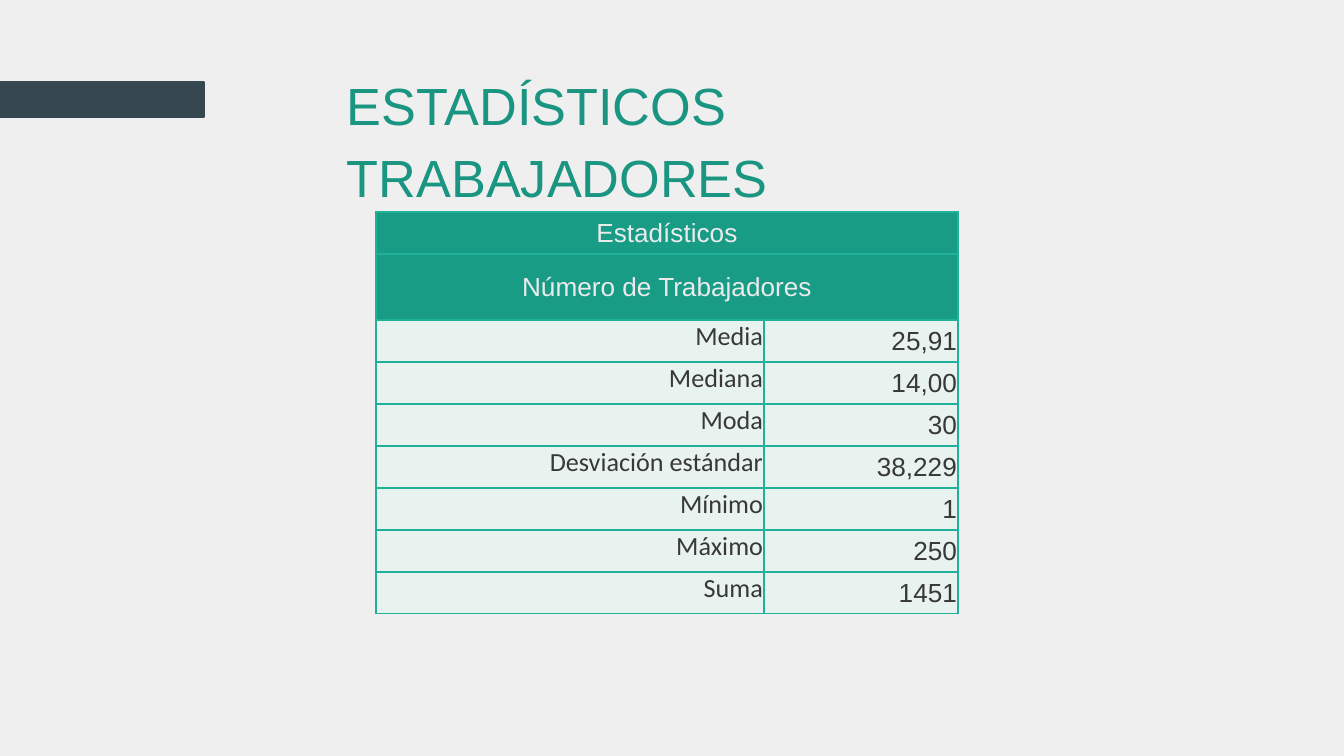
import dataclasses
import lxml.etree
import pptx
import pptx.dml.color
import pptx.enum.shapes
import pptx.enum.text
import pptx.oxml.ns
import pptx.util

RGBColor = pptx.dml.color.RGBColor
PAPER = RGBColor(0xEF, 0xEF, 0xEF)
SLATE = RGBColor(0x37, 0x47, 0x4F)
TEAL = RGBColor(0x1A, 0x95, 0x81)
HEAD = RGBColor(0x18, 0x9C, 0x86)
PALE = RGBColor(0xE8, 0xF2, 0xEF)
LIGHT = RGBColor(0xEB, 0xEB, 0xEB)
DARK = RGBColor(0x38, 0x38, 0x38)
EDGE = RGBColor(0x1F, 0xB2, 0x99)
ALIGN = pptx.enum.text.PP_ALIGN
ANCHOR = pptx.enum.text.MSO_ANCHOR
SCALE = 914400 / 134.4


def px(count: int) -> int:
    return round(count * SCALE)


@dataclasses.dataclass(frozen=True)
class Style:
    font: str
    size: int
    color: RGBColor
    align: ALIGN
    anchor: ANCHOR
    fill: RGBColor | None = None


@dataclasses.dataclass(frozen=True)
class Stat:
    label: str
    value: str


TITLE = Style("Arial", 28, TEAL, ALIGN.LEFT, ANCHOR.TOP)
HEADER = Style("Arial", 14, LIGHT, ALIGN.CENTER, ANCHOR.MIDDLE, HEAD)
LABEL = Style("Calibri", 14, DARK, ALIGN.RIGHT, ANCHOR.TOP, PALE)
VALUE = Style("Arial", 14, DARK, ALIGN.RIGHT, ANCHOR.MIDDLE, PALE)

HEADS = ["Estadísticos", "Número de Trabajadores"]
STATS = [
    Stat("Media", "25,91"),
    Stat("Mediana", "14,00"),
    Stat("Moda", "30"),
    Stat("Desviación estándar", "38,229"),
    Stat("Mínimo", "1"),
    Stat("Máximo", "250"),
    Stat("Suma", "1451"),
]
WIDTHS = [388, 194]
HEIGHTS = [42, 66] + [42] * len(STATS)


def write(frame, text: str, style: Style):
    line = frame.paragraphs[0]
    line.alignment = style.align
    run = line.add_run()
    run.text = text
    run.font.name = style.font
    run.font.size = pptx.util.Pt(style.size)
    run.font.color.rgb = style.color
    return line


def edge(cell) -> None:
    props = cell._tc.get_or_add_tcPr()
    for place, side in enumerate(("lnL", "lnR", "lnT", "lnB")):
        line = lxml.etree.Element(pptx.oxml.ns.qn(f"a:{side}"), w=str(pptx.util.Pt(1)))
        fill = lxml.etree.SubElement(line, pptx.oxml.ns.qn("a:solidFill"))
        lxml.etree.SubElement(fill, pptx.oxml.ns.qn("a:srgbClr"), val=str(EDGE))
        props.insert(place, line)


def dress(cell, style: Style) -> None:
    cell.fill.solid()
    cell.fill.fore_color.rgb = style.fill
    cell.vertical_anchor = style.anchor
    cell.margin_left = cell.margin_right = cell.margin_top = px(1)
    cell.margin_bottom = 0
    edge(cell)


def draw_bar(slide) -> None:
    bar = slide.shapes.add_shape(
        pptx.enum.shapes.MSO_SHAPE.RECTANGLE, 0, px(82), px(204), px(35))
    bar.shadow.inherit = False
    bar.fill.solid()
    bar.fill.fore_color.rgb = SLATE
    bar.line.color.rgb = SLATE
    bar.line.width = pptx.util.Pt(0.75)


def draw_title(slide) -> None:
    box = slide.shapes.add_textbox(px(337), px(54), px(714), px(133))
    frame = box.text_frame
    frame.word_wrap = True
    frame.vertical_anchor = TITLE.anchor
    frame.margin_left = frame.margin_right = px(10)
    frame.margin_top = frame.margin_bottom = px(10)
    line = write(frame, "ESTADÍSTICOS TRABAJADORES", TITLE)
    line.line_spacing = 1.15


def draw_table(slide) -> None:
    table = slide.shapes.add_table(
        len(HEIGHTS), len(WIDTHS), px(376), px(212),
        px(sum(WIDTHS)), px(sum(HEIGHTS))).table
    for column, width in zip(table.columns, WIDTHS):
        column.width = px(width)
    for row, height in zip(table.rows, HEIGHTS):
        row.height = px(height)
    for index, text in enumerate(HEADS):
        first, last = table.cell(index, 0), table.cell(index, 1)
        first.merge(last)
        dress(first, HEADER)
        dress(last, HEADER)
        write(first.text_frame, text, HEADER)
    for index, stat in enumerate(STATS, len(HEADS)):
        for column, (text, style) in enumerate(((stat.label, LABEL), (stat.value, VALUE))):
            cell = table.cell(index, column)
            dress(cell, style)
            write(cell.text_frame, text, style)


def main() -> None:
    deck = pptx.Presentation()
    deck.slide_width, deck.slide_height = px(1344), px(756)
    slide = deck.slides.add_slide(deck.slide_layouts[6])
    slide.background.fill.solid()
    slide.background.fill.fore_color.rgb = PAPER
    draw_bar(slide)
    draw_title(slide)
    draw_table(slide)
    deck.save("out.pptx")


if __name__ == "__main__":
    main()
